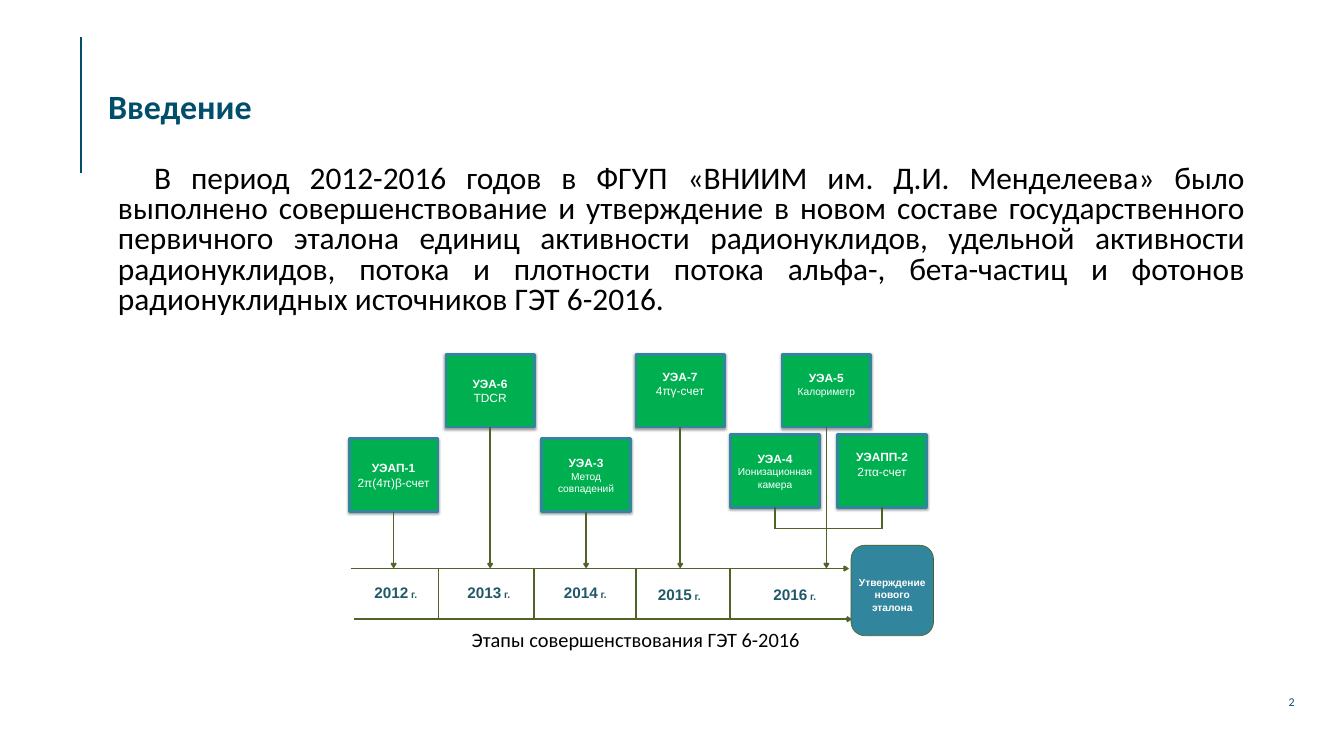
import lxml.etree
import pptx
import pptx.dml.color
import pptx.enum.shapes
import pptx.enum.text
import pptx.oxml
import pptx.oxml.ns
import pptx.util

W, H = pptx.util.Pt(1583), pptx.util.Pt(890)
NAVY, BLACK, WHITE = "004E6B", "000000", "FFFFFF"
GREEN, TEAL, OLIVE, YEAR = "00B050", "31859C", "4F6228", "215968"

TITLE = "Введение"
BODY = (
    "В период 2012-2016 годов в ФГУП «ВНИИМ им. Д.И. Менделеева» было выполнено "
    "совершенствование и утверждение в новом составе государственного первичного "
    "эталона единиц активности радионуклидов, удельной активности радионуклидов, "
    "потока и плотности потока альфа-, бета-частиц и фотонов радионуклидных "
    "источников ГЭТ 6-2016."
)
CAPTION = "Этапы совершенствования ГЭТ 6-2016"
RESULT = ["Утверждение нового", "эталона"]
PAGE = "2"

UPPER, LOWER, PAIR = 46.87, 58.04, 57.47
BOX_W, BOX_H = 6.6, 9.63
AXIS_TOP, AXIS_BOTTOM, BRACKET = 75.2, 81.9, 69.92

UNITS = [
    ("УЭАП-1", ["2π(4π)β-счет"], 14, 25.99, LOWER, 0, AXIS_TOP),
    ("УЭА-6", ["TDCR"], 14, 33.17, UPPER, 0, AXIS_TOP),
    ("УЭА-3", ["Метод", "совпадений"], 12, 40.31, LOWER, 0, AXIS_TOP),
    ("УЭА-7", ["4πγ-счет"], 14, 47.31, UPPER, 0.22, AXIS_TOP),
    ("УЭА-4", ["Ионизационная", "камера"], 12, 54.37, PAIR, 0, BRACKET),
    ("УЭАПП-2", ["2πα-счет"], 14, 62.33, PAIR, 0.22, BRACKET),
    ("УЭА-5", ["Калориметр"], 12, 58.19, UPPER, 0.22, BRACKET),
]
YEARS = [
    ("2012", 29.45, 76.7),
    ("2013", 36.37, 76.7),
    ("2014", 43.55, 76.7),
    ("2015", 50.55, 76.94),
    ("2016", 59.15, 76.94),
]
DIVIDERS = [32.62, 39.76, 47.3, 54.31]
AXES = [(26.11, 63.18, AXIS_TOP), (26.34, 63.4, AXIS_BOTTOM)]

PP = pptx.enum.text.PP_ALIGN
MIDDLE = pptx.enum.text.MSO_ANCHOR.MIDDLE
TOP = pptx.enum.text.MSO_ANCHOR.TOP
SHAPE = pptx.enum.shapes.MSO_SHAPE
SHADOW = (
    '<a:effectLst xmlns:a="http://schemas.openxmlformats.org/drawingml/2006/main">'
    '<a:outerShdw blurRad="39370" dist="20320" dir="5400000" rotWithShape="0">'
    '<a:srgbClr val="000000"><a:alpha val="38000"/></a:srgbClr>'
    "</a:outerShdw></a:effectLst>"
)

prs = pptx.Presentation()
prs.slide_width = W
prs.slide_height = H
slide = prs.slides.add_slide(prs.slide_layouts[6])


def color(value):
    return pptx.dml.color.RGBColor.from_string(value)


def px(share):
    return round(W * share / 100)


def py(share):
    return round(H * share / 100)


def write(s, paragraphs, align, anchor=TOP, wrap=True, top=0, bottom=0):
    tf = s.text_frame
    tf.word_wrap = wrap
    tf.vertical_anchor = anchor
    tf.margin_left = tf.margin_right = 0
    tf.margin_top = pptx.util.Inches(top)
    tf.margin_bottom = pptx.util.Inches(bottom)
    for i, runs in enumerate(paragraphs):
        p = tf.add_paragraph() if i else tf.paragraphs[0]
        p.alignment = align
        for text, size, font, fill, bold in runs:
            r = p.add_run()
            r.text = text
            r.font.size = pptx.util.Pt(size)
            r.font.name = font
            r.font.bold = bold
            r.font.color.rgb = color(fill)
    return tf.paragraphs[0]


def add_text(x, y, w, h, paragraphs, align, **layout):
    s = slide.shapes.add_textbox(px(x), py(y), px(w), py(h))
    return write(s, paragraphs, align, **layout)


def add_block(kind, x, y, w, h, fill, line, width):
    s = slide.shapes.add_shape(kind, px(x), py(y), px(w), py(h))
    s.shadow.inherit = False
    s.fill.solid()
    s.fill.fore_color.rgb = color(fill)
    s.line.color.rgb = color(line)
    s.line.width = pptx.util.Pt(width)
    return s


def add_line(x1, y1, x2, y2, line=OLIVE, width=2, arrow=False):
    s = slide.shapes.add_connector(
        pptx.enum.shapes.MSO_CONNECTOR.STRAIGHT, px(x1), py(y1), px(x2), py(y2)
    )
    s.line.color.rgb = color(line)
    s.line.width = pptx.util.Pt(width)
    if arrow:
        ln = s.line._get_or_add_ln()
        lxml.etree.SubElement(ln, pptx.oxml.ns.qn("a:tailEnd"), type="arrow")
    lxml.etree.SubElement(s._element.spPr, pptx.oxml.ns.qn("a:effectLst"))
    return s


add_line(6.04, 22.82, 6.04, 4.85, NAVY, 1.65)
add_text(8.05, 11.33, 83.86, 5.34, [[(TITLE, 40, "Calibri", NAVY, True)]],
         PP.LEFT, anchor=MIDDLE)
p = add_text(8.78, 21.88, 83.86, 20.31, [[(BODY, 37, "Calibri", BLACK, False)]], PP.JUSTIFY)
p.line_spacing = 0.8
p.space_after = pptx.util.Pt(6)
p._p.get_or_add_pPr().set("indent", str(pptx.util.Inches(0.59)))
add_text(24.56, 82.97, 45.48, 7.28, [[(CAPTION, 24, "Calibri", BLACK, False)]], PP.CENTER)

for name, method, size, x, y, bottom, target in UNITS:
    s = add_block(SHAPE.RECTANGLE, x, y, BOX_W, BOX_H, GREEN, TEAL, 3)
    effects = s._element.spPr.find(pptx.oxml.ns.qn("a:effectLst"))
    effects.getparent().replace(effects, pptx.oxml.parse_xml(SHADOW))
    rows = [[(name, 14, "Arial", WHITE, True)]]
    rows += [[(text, size, "Arial", WHITE, False)] for text in method]
    write(s, rows, PP.CENTER, MIDDLE, wrap=False, bottom=bottom)
    center = x + BOX_W / 2
    drop = add_line(center, y + BOX_H, center, target, arrow=target == AXIS_TOP)
    drop.begin_connect(s, 2)

left, right, middle = (UNITS[i][3] + BOX_W / 2 for i in (4, 5, 6))
add_line(right, BRACKET, left, BRACKET)
add_line(middle, BRACKET, middle, AXIS_TOP, arrow=True)

for start, end, y in AXES:
    add_line(start, y, end, y, arrow=True)
for x in DIVIDERS:
    add_line(x, AXIS_TOP, x, AXIS_BOTTOM)
for year, center, y in YEARS:
    runs = [(year, 18, "Arial", YEAR, True), (" г.", 12, "Arial", YEAR, True)]
    add_text(center - 2.19, y, 4.37, 3.24, [runs], PP.CENTER, anchor=MIDDLE)

s = add_block(SHAPE.ROUNDED_RECTANGLE, 63.32, 72.12, 6.14, 11.97, TEAL, OLIVE, 0.75)
write(s, [[(text, 12, "Arial", WHITE, True)] for text in RESULT], PP.CENTER, MIDDLE, top=0.14)
add_text(95.33, 91.94, 1, 2.27, [[(PAGE, 14, "Calibri", NAVY, False)]], PP.RIGHT, wrap=False)

prs.save("out.pptx")
